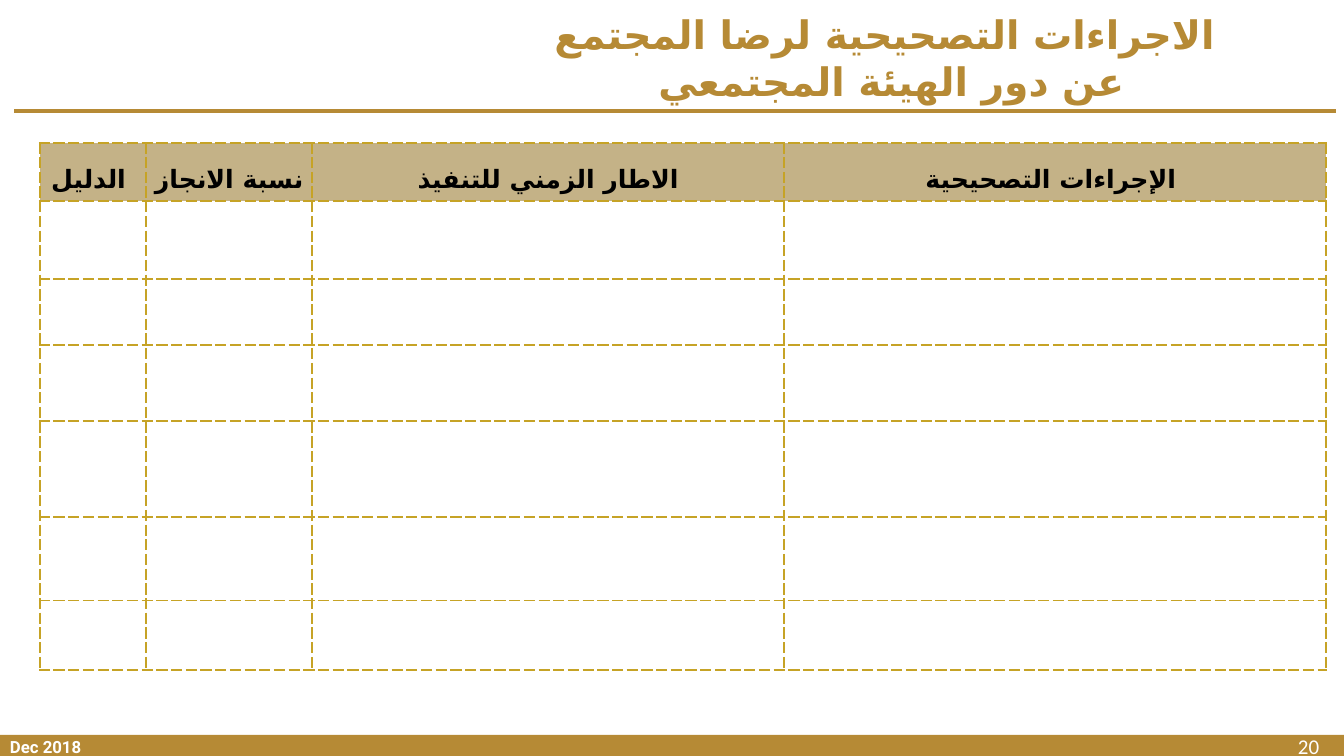
from dataclasses import dataclass

from lxml import etree
from pptx import Presentation
from pptx import util as u
from pptx.dml.color import RGBColor
from pptx.enum import shapes, text
from pptx.oxml.ns import qn


@dataclass(frozen=True)
class Theme:
    gold: str = "B68A35"
    header: str = "C4B287"
    border: str = "C6A326"
    white: str = "FFFFFF"
    black: str = "000000"
    font: str = "Roboto"
    arabic_font: str = "DejaVu Sans"
    number_font: str = "Calibri"
    title_size: float = 28
    header_size: float = 18
    number_size: float = 15
    date_size: float = 12
    rule_width: float = 3
    border_width: float = 1.5


@dataclass(frozen=True)
class Column:
    heading: str
    width: float


T = Theme()


@dataclass(frozen=True)
class Label:
    content: str
    left: float
    top: float
    width: float
    height: float
    size: float
    color: str
    font: str = T.font
    bold: bool = True
    align: text.PP_ALIGN = text.PP_ALIGN.LEFT
    anchor: text.MSO_ANCHOR = text.MSO_ANCHOR.TOP
    rtl: bool = False


SLIDE_W, SLIDE_H = 33.87, 19.05
COLUMNS = [
    Column("الدليل ", 2.68),
    Column("نسبة الانجاز", 4.19),
    Column("الاطار الزمني للتنفيذ", 11.89),
    Column("الإجراءات التصحيحية ", 13.66),
]
ROW_HEIGHTS = [1.45, 1.96, 1.67, 1.91, 2.42, 2.11, 1.75]
LABELS = [
    Label("20", 32.46, 18.36, 1.98, 1.02, T.number_size, T.white, T.number_font, bold=False),
    Label("Dec 2018", 0, 18.44, 5.36, 1.02, T.date_size, T.white),
    Label("الاجراءات التصحيحية لرضا المجتمع عن دور الهيئة المجتمعي ",
          13.36, 0.43, 17.86, 2.03, T.title_size, T.gold,
          align=text.PP_ALIGN.CENTER, anchor=text.MSO_ANCHOR.MIDDLE, rtl=True),
]


def write(tf, content: str, *, size: float, color: str, font: str = T.font,
          bold: bool = True, align=text.PP_ALIGN.LEFT, rtl: bool = False,
          line_spacing: float | None = None, space_after: float | None = None) -> None:
    p = tf.paragraphs[0]
    p.alignment = align
    if rtl:
        p._p.get_or_add_pPr().set("rtl", "1")
    if line_spacing is not None:
        p.line_spacing = line_spacing
    if space_after is not None:
        p.space_after = u.Pt(space_after)
    r = p.add_run()
    r.text = content
    r.font.size, r.font.bold, r.font.name = u.Pt(size), bold, font
    r.font.color.rgb = RGBColor.from_string(color)
    etree.SubElement(r.font._element, qn("a:cs"), typeface=T.arabic_font)


def add_label(s, label: Label) -> None:
    box = (label.left, label.top, label.width, label.height)
    tf = s.shapes.add_textbox(*map(u.Cm, box)).text_frame
    tf.word_wrap = True
    tf.vertical_anchor = label.anchor
    write(tf, label.content, size=label.size, color=label.color, font=label.font,
          bold=label.bold, align=label.align, rtl=label.rtl)


def add_footer_band(s) -> None:
    top = 18.52
    sp = s.shapes.add_shape(shapes.MSO_SHAPE.RECTANGLE, 0, u.Cm(top),
                            u.Cm(SLIDE_W), u.Cm(SLIDE_H - top))
    sp.shadow.inherit = False
    sp.fill.solid()
    sp.fill.fore_color.rgb = RGBColor.from_string(T.gold)
    sp.line.fill.background()


def add_title_rule(s) -> None:
    y = u.Cm(2.79)
    rule = s.shapes.add_connector(shapes.MSO_CONNECTOR.STRAIGHT,
                                  u.Cm(0.36), y, u.Cm(33.66), y)
    rule.line.color.rgb = RGBColor.from_string(T.gold)
    rule.line.width = u.Pt(T.rule_width)
    etree.SubElement(rule._element.spPr, qn("a:effectLst"))


def dash_borders(cell) -> None:
    """Draw all four sides; must run before the cell gets its fill."""
    tcPr = cell._tc.get_or_add_tcPr()
    for side in ("lnL", "lnR", "lnT", "lnB"):
        ln = etree.SubElement(tcPr, qn(f"a:{side}"), w=str(u.Pt(T.border_width)))
        fill = etree.SubElement(ln, qn("a:solidFill"))
        etree.SubElement(fill, qn("a:srgbClr"), val=T.border)
        etree.SubElement(ln, qn("a:prstDash"), val="sysDash")


def add_actions_table(s) -> None:
    table = s.shapes.add_table(
        len(ROW_HEIGHTS), len(COLUMNS), u.Cm(1), u.Cm(3.61),
        u.Cm(sum(c.width for c in COLUMNS)), u.Cm(sum(ROW_HEIGHTS))).table
    table.first_row = table.horz_banding = False
    for col, column in zip(table.columns, COLUMNS):
        col.width = u.Cm(column.width)
    for row, height in zip(table.rows, ROW_HEIGHTS):
        row.height = u.Cm(height)
    for cell in table.iter_cells():
        cell.margin_left = cell.margin_right = u.Cm(0.15)
        cell.margin_top = cell.margin_bottom = u.Cm(0.08)
        cell.vertical_anchor = text.MSO_ANCHOR.MIDDLE
        dash_borders(cell)
        cell.fill.background()
    for cell, column in zip(table.rows[0].cells, COLUMNS):
        cell.fill.solid()
        cell.fill.fore_color.rgb = RGBColor.from_string(T.header)
        write(cell.text_frame, column.heading, size=T.header_size, color=T.black,
              align=text.PP_ALIGN.CENTER, line_spacing=1.5, space_after=6)


def main() -> None:
    prs = Presentation()
    prs.slide_width, prs.slide_height = u.Cm(SLIDE_W), u.Cm(SLIDE_H)
    s = prs.slides.add_slide(prs.slide_layouts[6])
    add_footer_band(s)
    add_title_rule(s)
    for label in LABELS:
        add_label(s, label)
    add_actions_table(s)
    prs.save("out.pptx")


if __name__ == "__main__":
    main()
